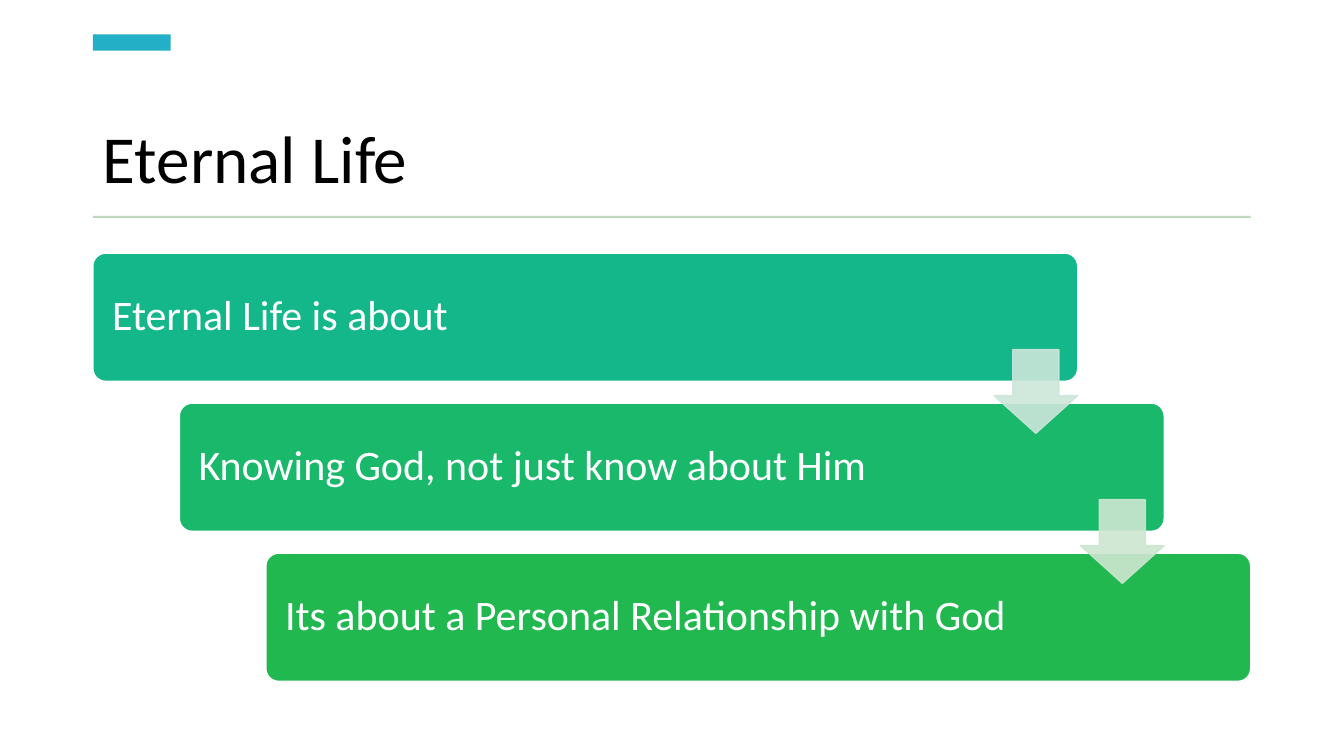
from dataclasses import dataclass

from lxml import etree
from pptx import Presentation
from pptx.dml.color import RGBColor
from pptx.enum import shapes, text
from pptx.oxml.ns import qn
from pptx.util import Cm, Pt

TITLE = "Eternal Life"
STEPS = [  # wording, card colour, colour of the arrow to the next card
    ("Eternal Life is about", "14B78A", "CCE6DA"),
    ("Knowing God, not just know about Him", "1AB86B", "CDE6D0"),
    ("Its about a Personal Relationship with God", "21B94F", None),
]


@dataclass(frozen=True)
class Theme:
    font: str = "Calibri"
    title_size: int = 48
    step_size: int = 30
    title_color: str = "000000"
    light: str = "FFFFFF"
    accent: str = "23B0C6"
    rule: str = "BED9BD"
    arrow_opacity: int = 90


THEME = Theme()

# Lengths in centimetres
LEFT, CONTENT_W = 2.34, 29.18
CARD_TOP, CARD_W, CARD_H = 6.38, 24.82, 3.23
STEP_X = (CONTENT_W - CARD_W) / (len(STEPS) - 1)
STEP_Y = 3.78
ARROW_SIZE, ARROW_DROP = 2.11, 2.43
CARD_INSET = 0.39


def add_filled(slide, preset, box, color, outline=None):
    """Add a flat preset shape; box is left, top, width, height in cm."""
    shape = slide.shapes.add_shape(preset, *map(Cm, box))
    shape.shadow.inherit = False
    shape.fill.solid()
    shape.fill.fore_color.rgb = RGBColor.from_string(color)
    if outline:
        shape.line.color.rgb = RGBColor.from_string(outline)
        shape.line.width = Pt(1)
    else:
        shape.line.fill.background()
    return shape


def write(frame, wording, size, color, anchor):
    frame.word_wrap = True
    frame.auto_size = text.MSO_AUTO_SIZE.NONE
    frame.vertical_anchor = anchor
    paragraph = frame.paragraphs[0]
    paragraph.alignment = text.PP_ALIGN.LEFT
    paragraph.line_spacing = 0.9
    run = paragraph.add_run()
    run.text = wording
    run.font.name = THEME.font
    run.font.size = Pt(size)
    run.font.color.rgb = RGBColor.from_string(color)


def set_opacity(shape, percent):
    """Make both fill and outline of the shape partly transparent."""
    for color in shape.element.spPr.iter(qn("a:srgbClr")):
        etree.SubElement(color, qn("a:alpha"), val=str(percent * 1000))


def add_card(slide, left, top, wording, color):
    card = add_filled(slide, shapes.MSO_SHAPE.ROUNDED_RECTANGLE,
                      (left, top, CARD_W, CARD_H), color, THEME.light)
    card.adjustments[0] = 0.1
    frame = card.text_frame
    frame.margin_left = frame.margin_right = Cm(CARD_INSET)
    write(frame, wording, THEME.step_size, THEME.light, text.MSO_ANCHOR.MIDDLE)


def add_arrow(slide, left, top, color):
    arrow = add_filled(slide, shapes.MSO_SHAPE.DOWN_ARROW,
                       (left, top, ARROW_SIZE, ARROW_SIZE), color, color)
    arrow.adjustments[0] = 0.45
    arrow.adjustments[1] = 0.45
    # The first adjustment is the shaft width, the second the head length
    arrow.adjustments[0] = 0.55
    set_opacity(arrow, THEME.arrow_opacity)


def main():
    deck = Presentation()
    deck.slide_width, deck.slide_height = Cm(33.87), Cm(19.05)
    slide = deck.slides.add_slide(deck.slide_layouts[5])

    title = slide.shapes.title
    title.left, title.top = Cm(LEFT), Cm(1.9)
    title.width, title.height = Cm(CONTENT_W), Cm(3.23)
    write(title.text_frame, TITLE, THEME.title_size, THEME.title_color,
          text.MSO_ANCHOR.BOTTOM)

    rectangle = shapes.MSO_SHAPE.RECTANGLE
    add_filled(slide, rectangle, (LEFT, 0.87, 1.96, 0.41), THEME.accent)
    add_filled(slide, rectangle, (LEFT, 5.44, CONTENT_W, 0.05), THEME.rule)

    corners = [(LEFT + i * STEP_X, CARD_TOP + i * STEP_Y)
               for i in range(len(STEPS))]
    for (left, top), (wording, color, _) in zip(corners, STEPS):
        add_card(slide, left, top, wording, color)
    for (left, top), (_, _, arrow_color) in zip(corners, STEPS):
        if arrow_color:
            add_arrow(slide, left + CARD_W - ARROW_SIZE, top + ARROW_DROP,
                      arrow_color)

    deck.save("out.pptx")


if __name__ == "__main__":
    main()
